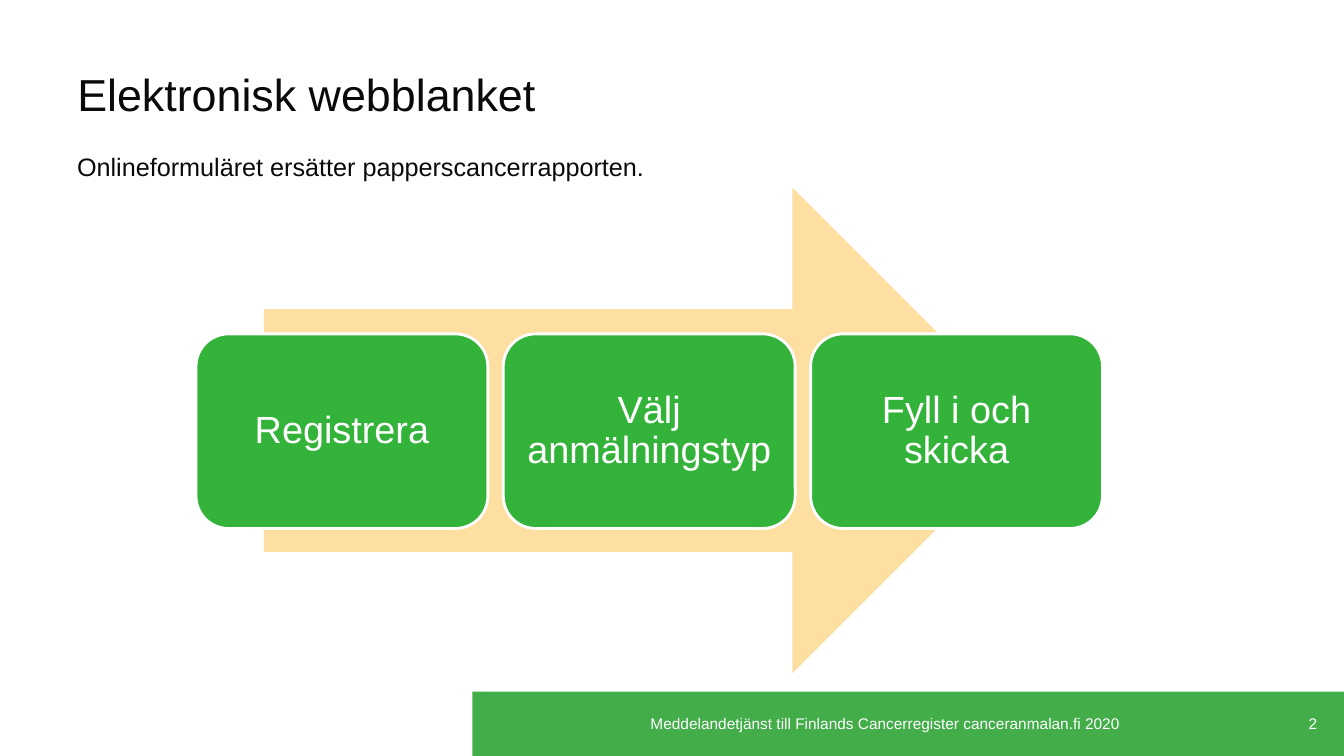
import pptx
import pptx.util
import pptx.dml.color
import pptx.enum.shapes
import pptx.enum.text

Pt = pptx.util.Pt
Align = pptx.enum.text.PP_ALIGN
Anchor = pptx.enum.text.MSO_ANCHOR
Shape = pptx.enum.shapes.MSO_SHAPE


def color(value):
    return pptx.dml.color.RGBColor.from_string(value)


def write(shape, text, size, ink="FFFFFF", align=Align.LEFT, anchor=Anchor.MIDDLE, spacing=1.0):
    frame = shape.text_frame
    frame.word_wrap = True
    frame.auto_size = pptx.enum.text.MSO_AUTO_SIZE.NONE
    frame.vertical_anchor = anchor
    frame.text = text
    paragraph = frame.paragraphs[0]
    paragraph.alignment = align
    paragraph.line_spacing = spacing
    paragraph.font.name = "Arial"
    paragraph.font.size = Pt(size)
    paragraph.font.color.rgb = color(ink)


presentation = pptx.Presentation()
presentation.slide_width = Pt(960)
presentation.slide_height = Pt(540)
slide = presentation.slides.add_slide(presentation.slide_layouts[5])

footer_bar = slide.shapes.add_shape(Shape.RECTANGLE, Pt(337.5), Pt(494), Pt(622.5), Pt(46))
footer_bar.shadow.inherit = False
footer_bar.fill.solid()
footer_bar.fill.fore_color.rgb = color("42AD49")
footer_bar.line.fill.background()

title = slide.shapes.title
title.left, title.top, title.width, title.height = Pt(48), Pt(21.6), Pt(864), Pt(90)
write(title, "Elektronisk webblanket", 32, ink="0A0A0A")

subtitle = slide.shapes.add_textbox(Pt(48), Pt(104.4), Pt(441), Pt(29))
write(subtitle, "Onlineformuläret ersätter papperscancerrapporten.", 18, ink="0A0A0A", anchor=Anchor.TOP)

footer = slide.shapes.add_textbox(Pt(450), Pt(502), Pt(365), Pt(29))
write(footer, "Meddelandetjänst till Finlands Cancerregister canceranmalan.fi 2020", 11, align=Align.CENTER)

page_number = slide.shapes.add_textbox(Pt(880.5), Pt(502), Pt(67.5), Pt(29))
write(page_number, "2", 11, align=Align.RIGHT)

process = slide.shapes.add_group_shape()
arrow = process.shapes.add_shape(Shape.RIGHT_ARROW, Pt(188.5), Pt(134), Pt(551), Pt(347))
arrow.shadow.inherit = False
arrow.fill.solid()
arrow.fill.fore_color.rgb = color("FDDFA2")
arrow.line.fill.background()

for index, label in enumerate(["Registrera", "Välj anmälningstyp", "Fyll i och skicka"]):
    step = process.shapes.add_shape(
        Shape.ROUNDED_RECTANGLE, Pt(140 + index * 219.5), Pt(238.5), Pt(208.5), Pt(139)
    )
    step.shadow.inherit = False
    step.fill.solid()
    step.fill.fore_color.rgb = color("33B339")
    step.line.color.rgb = color("FFFFFF")
    step.line.width = Pt(2)
    frame = step.text_frame
    frame.margin_left = frame.margin_right = frame.margin_top = frame.margin_bottom = Pt(8)
    write(step, label, 27, align=Align.CENTER, spacing=0.9)

presentation.save("out.pptx")
